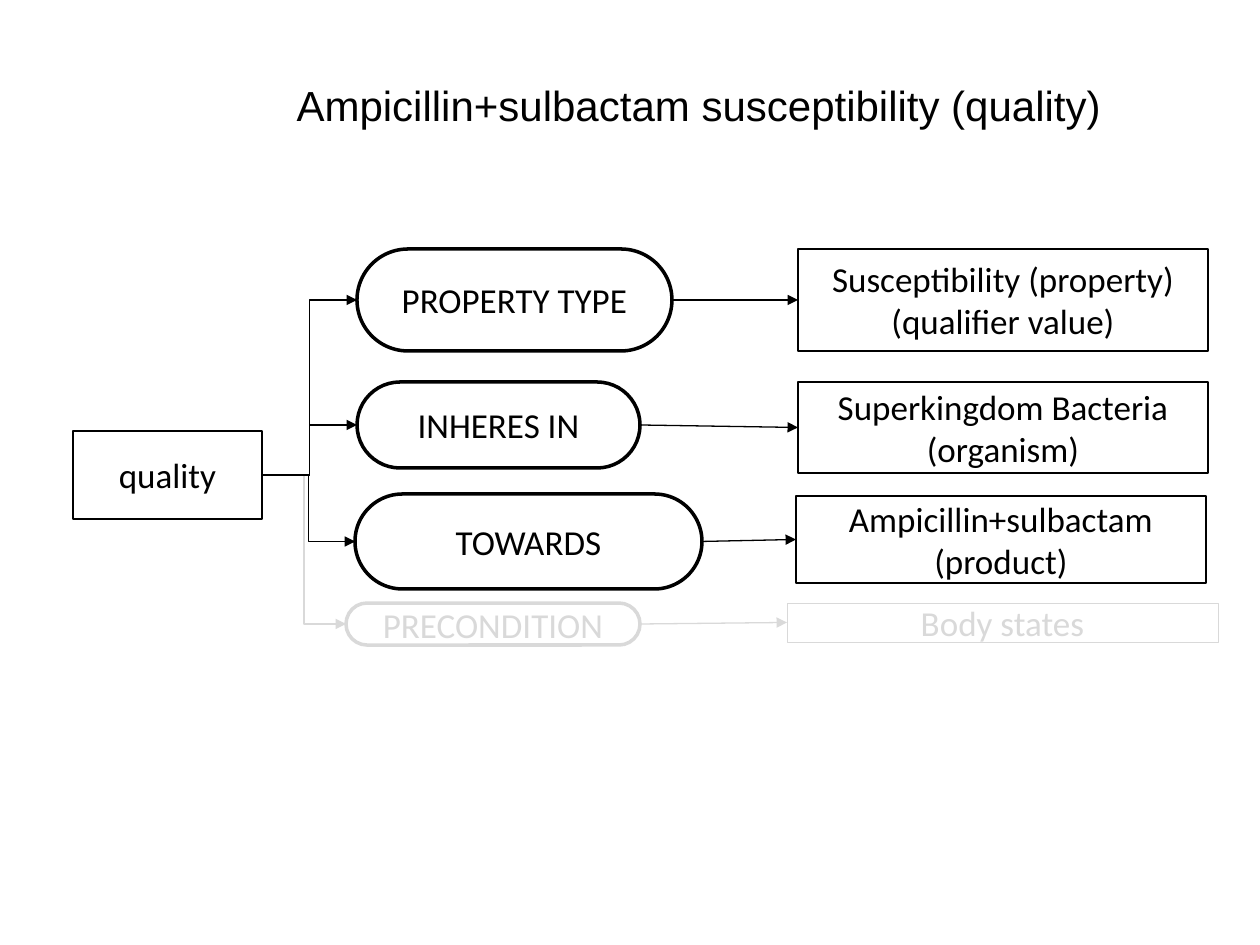
"""Build a concept-model slide linking a quality to its attributes and values."""
from pptx import Presentation
from pptx import util as u
from pptx.dml.color import RGBColor
from pptx.enum import shapes, text
from pptx.oxml.ns import qn
from lxml import etree

SCALE = 914400 / 126
BLACK = RGBColor(0x00, 0x00, 0x00)
GREY = RGBColor(0xD9, 0xD9, 0xD9)
ROWS = [
    ("PRECONDITION", (346, 603, 294, 42), "Body states", (787, 603, 431, 39), GREY, 0.25),
    ("PROPERTY TYPE", (357, 249, 315, 102),
     "Susceptibility (property) (qualifier value)", (798, 249, 410, 102), BLACK, 0.75),
    ("INHERES IN", (357, 382, 283, 86),
     "Superkingdom Bacteria (organism)", (798, 382, 410, 91), BLACK, 0.75),
    ("TOWARDS", (355, 494, 347, 95),
     "Ampicillin+sulbactam (product)", (796, 496, 410, 87), BLACK, 0.75),
]


def px(n):
    return u.Emu(round(n * SCALE))


def put_text(sp, words, font="Calibri", size=20, color=BLACK,
             align=text.PP_ALIGN.CENTER, anchor=text.MSO_ANCHOR.MIDDLE, wrap=True):
    tf = sp.text_frame
    tf.word_wrap = wrap
    tf.vertical_anchor = anchor
    p = tf.paragraphs[0]
    p.alignment = align
    r = p.add_run()
    r.text = words
    r.font.name = font
    r.font.size = u.Pt(size)
    r.font.color.rgb = color


def add_node(s, kind, box, words, color, width):
    sp = s.shapes.add_shape(kind, *map(px, box))
    sp.shadow.inherit = False
    sp.fill.background()
    sp.line.color.rgb = color
    sp.line.width = u.Pt(width)
    put_text(sp, words, color=color)
    return sp


def add_box(s, box, words, color=BLACK, width=0.75):
    sp = add_node(s, shapes.MSO_SHAPE.RECTANGLE, box, words, color, width)
    tf = sp.text_frame
    tf.margin_left = tf.margin_right = px(9)
    tf.margin_top = tf.margin_bottom = px(4)
    return sp


def add_pill(s, box, words, color):
    sp = add_node(s, shapes.MSO_SHAPE.ROUNDED_RECTANGLE, box, words, color, 2)
    sp.adjustments[0] = 0.5
    return sp


def add_arrow(s, kind, start, end, color, width):
    c = s.shapes.add_connector(kind, 0, 0, 0, 0)
    c.begin_connect(start, 3)
    c.end_connect(end, 1)
    c.line.color.rgb = color
    c.line.width = u.Pt(width)
    ln = c.line._get_or_add_ln()
    etree.SubElement(ln, qn("a:tailEnd"), type="triangle")
    etree.SubElement(c._element.spPr, qn("a:effectLst"))


def add_title(s, words):
    sp = s.shapes.title
    sp.left, sp.top, sp.width, sp.height = map(px, (284, 73, 839, 63))
    put_text(sp, words, font="Arial", size=24, align=text.PP_ALIGN.LEFT,
             anchor=text.MSO_ANCHOR.TOP, wrap=False)
    sp.text_frame.auto_size = text.MSO_AUTO_SIZE.SHAPE_TO_FIT_TEXT


def main():
    prs = Presentation()
    prs.slide_width, prs.slide_height = px(1260), px(945)
    s = prs.slides.add_slide(prs.slide_layouts[5])
    add_title(s, "Ampicillin+sulbactam susceptibility (quality)")
    quality = add_box(s, (73, 431, 189, 88), "quality")
    for attribute, pill_box, value, value_box, color, width in ROWS:
        pill = add_pill(s, pill_box, attribute, color)
        box = add_box(s, value_box, value, color, width)
        add_arrow(s, shapes.MSO_CONNECTOR.STRAIGHT, pill, box, color, 0.75)
        add_arrow(s, shapes.MSO_CONNECTOR.ELBOW, quality, pill, color, 1)
    prs.save("out.pptx")


if __name__ == "__main__":
    main()
